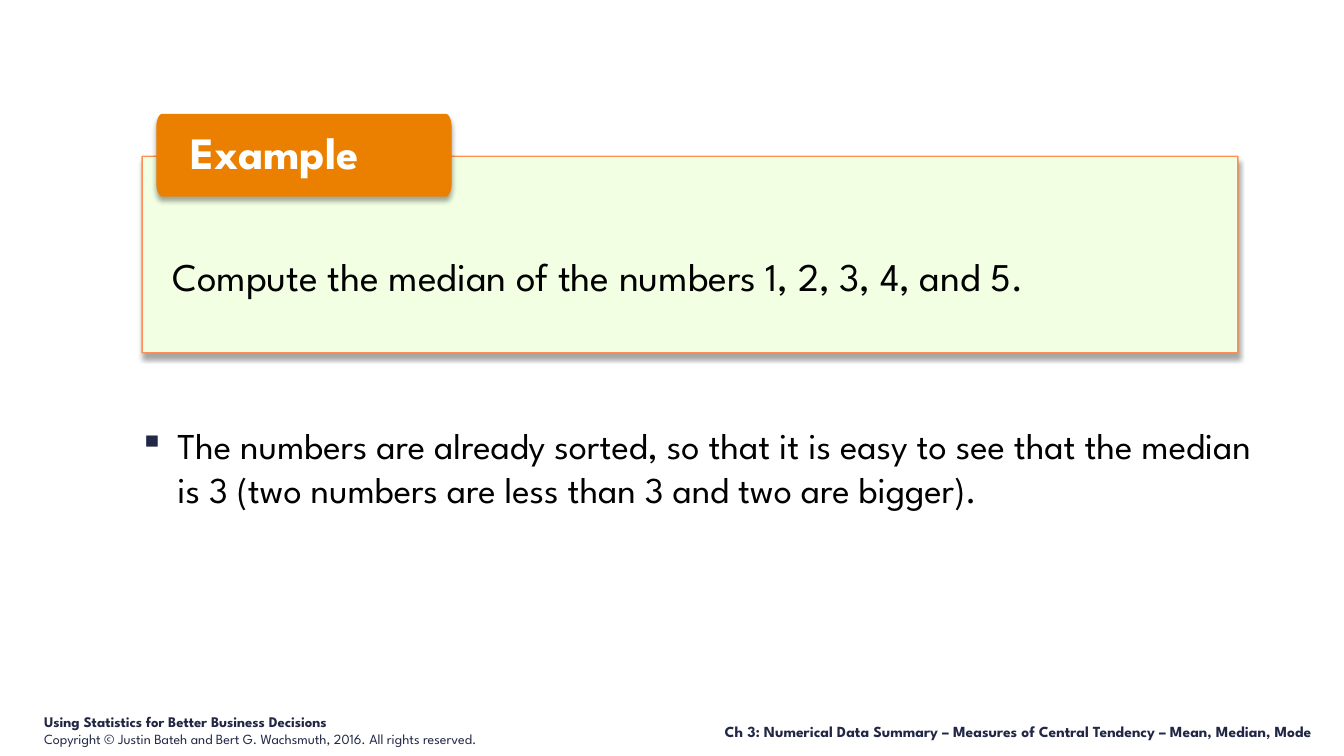
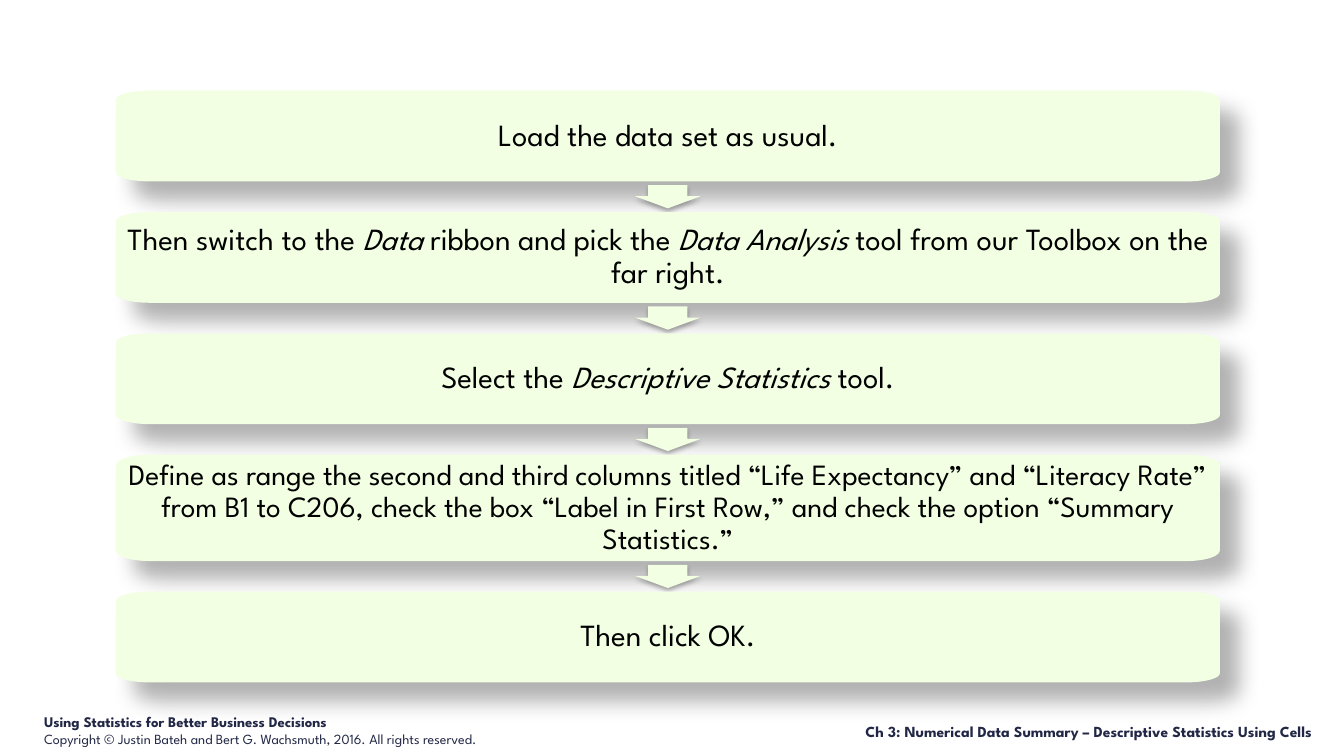
from dataclasses import dataclass
from math import cos, pi, sin

from lxml.etree import SubElement
from pptx import Presentation
from pptx.dml.color import RGBColor
from pptx.enum.shapes import MSO_SHAPE
from pptx.enum.text import MSO_ANCHOR, MSO_AUTO_SIZE, PP_ALIGN
from pptx.oxml.ns import qn
from pptx.util import Inches, Pt


@dataclass(frozen=True)
class Theme:
    font: str = "League Spartan"
    ink: str = "000000"
    navy: str = "212745"
    white: str = "FFFFFF"
    mint: str = "F2FFE3"
    orange: str = "EB8000"
    coral: str = "FF8643"
    label: float = 32
    example: float = 28
    body: float = 26
    step: float = 22
    long_step: float = 21
    chapter: float = 11
    book: float = 10.5
    copyright: float = 10


@dataclass(frozen=True)
class Shadow:
    opacity: int
    blur: float
    distance: float
    angle: int


THEME = Theme()
WIDTH, HEIGHT = Inches(13.33), Inches(7.5)
COLUMNS = ROWS = 100
PANEL_SHADOW = Shadow(35, 4, 3, 90)
STEP_SHADOW = Shadow(30, 15, 18, 45)
ARROW_SHADOW = Shadow(32, 3.5, 2.2, 90)

STEPS = [
    ("Load the data set as usual.", 12, THEME.step),
    ("Then switch to the *Data *ribbon and pick the *Data Analysis *tool from our Toolbox on the far right.",
     12, THEME.step),
    ("Select the *Descriptive Statistics *tool.", 12, THEME.step),
    ("Define as range the second and third columns titled “Life Expectancy” and “Literacy Rate” "
     "from B1 to C206, check the box “Label in First Row,” and check the option “Summary Statistics.”",
     14.07, THEME.long_step),
    ("Then click OK.", 12, THEME.step),
]


def cell(column, row, columns, rows):
    across, down = WIDTH / COLUMNS, HEIGHT / ROWS
    return round(column * across), round(row * down), round(columns * across), round(rows * down)


def write(frame, text, size, color=THEME.ink, bold=False, align=PP_ALIGN.LEFT,
          spacing=None, before=None, after=None):
    first = frame.paragraphs[0]
    paragraph = frame.add_paragraph() if first.runs else first
    paragraph.alignment = align
    paragraph.line_spacing = spacing
    paragraph.space_before = None if before is None else Pt(before)
    paragraph.space_after = None if after is None else Pt(after)
    for index, part in enumerate(text.split("*")):
        run = paragraph.add_run()
        run.text = part
        run.font.name = THEME.font
        run.font.size = Pt(size)
        run.font.bold = bold
        run.font.italic = index % 2 == 1
        run.font.color.rgb = RGBColor.from_string(color)
    return paragraph


def set_frame(frame, anchor=MSO_ANCHOR.TOP, insets=(0.1, 0.05, 0.1, 0.05)):
    frame.word_wrap = True
    frame.vertical_anchor = anchor
    frame.margin_left, frame.margin_top, frame.margin_right, frame.margin_bottom = map(Inches, insets)
    return frame


def add_text_area(slide, area, **layout):
    return set_frame(slide.shapes.add_textbox(*area).text_frame, **layout)


def set_opacity(color_element, percent):
    SubElement(color_element, qn("a:alpha"), val=str(percent * 1000))


def paint(surface, fill, shadow, outline=None):
    surface.fill.solid()
    surface.fill.fore_color.rgb = RGBColor.from_string(fill)
    if outline:
        surface.line.width = Pt(1)
        surface.line.color.rgb = RGBColor.from_string(outline)
        set_opacity(surface.line.fill._xPr.find(".//" + qn("a:srgbClr")), 90)
    else:
        surface.line.fill.background()
    surface.shadow.inherit = False
    effects = surface._element.spPr.find(qn("a:effectLst"))
    cast = SubElement(effects, qn("a:outerShdw"), blurRad=str(Pt(shadow.blur)),
                      dist=str(Pt(shadow.distance)), dir=str(shadow.angle * 60000),
                      algn="ctr", rotWithShape="0")
    set_opacity(SubElement(cast, qn("a:srgbClr"), val="000000"), shadow.opacity)
    return surface


def add_rounded(slide, area, curve, fill, shadow):
    left, top, width, height = area
    radius_x, radius_y = width * curve[0], height * curve[1]
    centers = [(left + width - radius_x, top + height - radius_y),
               (left + radius_x, top + height - radius_y),
               (left + radius_x, top + radius_y),
               (left + width - radius_x, top + radius_y)]
    points = []
    for quarter, (x, y) in enumerate(centers):
        for move in range(13):
            angle = (quarter + move / 12) * pi / 2
            points.append((round(x + radius_x * cos(angle)), round(y + radius_y * sin(angle))))
    outline = slide.shapes.build_freeform(*points[0])
    outline.add_line_segments(points[1:], close=True)
    return paint(outline.convert_to_shape(), fill, shadow)


def add_footer(slide, chapter):
    book = add_text_area(slide, cell(2.55, 93.6, 39.6, 5.33))
    write(book, "Using Statistics for Better Business Decisions", THEME.book, color=THEME.navy, bold=True)
    write(book, "Copyright © Justin Bateh and Bert G. Wachsmuth, 2016. All rights reserved.",
          THEME.copyright, color=THEME.navy, after=1)
    topic = add_text_area(slide, cell(43.43, 94.8, 54.98, 3.87), anchor=MSO_ANCHOR.BOTTOM)
    topic.auto_size = MSO_AUTO_SIZE.SHAPE_TO_FIT_TEXT
    write(topic, f"Ch 3: Numerical Data Summary – {chapter}", THEME.chapter,
          color=THEME.navy, bold=True, align=PP_ALIGN.RIGHT)


def add_example(slide, question):
    panel = slide.shapes.add_shape(MSO_SHAPE.RECTANGLE, *cell(10.58, 20.67, 81.53, 26))
    paint(panel, THEME.mint, PANEL_SHADOW, outline=THEME.coral)
    write(set_frame(panel.text_frame, insets=(0.3, 0.95, 0.1, 0)), question, THEME.example)
    tab = add_rounded(slide, cell(11.63, 15.07, 21.98, 10.93), (0.02, 0.17), THEME.orange, PANEL_SHADOW)
    write(set_frame(tab.text_frame, anchor=MSO_ANCHOR.MIDDLE, insets=(0.34, 0.04, 0.34, 0.04)),
          "Example", THEME.label, color=THEME.white, bold=True, spacing=0.9, after=0.35 * THEME.label)


def add_bullet(frame, text):
    point = write(frame, text, THEME.body, before=7)
    properties = point._p.get_or_add_pPr()
    properties.set("marL", str(Inches(0.45)))
    properties.set("indent", str(Inches(-0.38)))
    SubElement(SubElement(properties, qn("a:buClr")), qn("a:srgbClr"), val=THEME.navy)
    SubElement(properties, qn("a:buSzPct"), val="95000")
    SubElement(properties, qn("a:buChar"), char="▪")


def add_arrow(slide, middle):
    columns, rows = 4.88, 3.07
    arrow = slide.shapes.add_shape(
        MSO_SHAPE.DOWN_ARROW, *cell(49.69 - columns / 2, middle - rows / 2, columns, rows))
    arrow.adjustments[0], arrow.adjustments[1] = 0.6, 0.52
    paint(arrow, THEME.mint, ARROW_SHADOW)


def add_steps(slide, steps, top, bottom):
    gap = (bottom - top - sum(rows for _, rows, _ in steps)) / (len(steps) - 1)
    row = top
    for index, (text, rows, size) in enumerate(steps):
        if index:
            add_arrow(slide, row - gap / 2)
        step = add_rounded(slide, cell(8.63, row, 82.13, rows), (0.03, 0.1), THEME.mint, STEP_SHADOW)
        write(set_frame(step.text_frame, anchor=MSO_ANCHOR.MIDDLE, insets=(0.06,) * 4),
              text, size, align=PP_ALIGN.CENTER, spacing=0.9, after=0.35 * size)
        row += rows + gap


def main():
    deck = Presentation()
    deck.slide_width, deck.slide_height = WIDTH, HEIGHT
    blank = deck.slide_layouts[6]

    median = deck.slides.add_slide(blank)
    add_example(median, "Compute the median of the numbers 1, 2, 3, 4, and 5.")
    add_bullet(add_text_area(median, cell(9.08, 55.33, 87, 28)),
               "The numbers are already sorted, so that it is easy to see that the median is 3 "
               "(two numbers are less than 3 and two are bigger).")
    add_footer(median, "Measures of Central Tendency – Mean, Median, Mode")

    procedure = deck.slides.add_slide(blank)
    add_steps(procedure, STEPS, 12, 90.27)
    add_footer(procedure, "Descriptive Statistics Using Cells")

    deck.save("out.pptx")


if __name__ == "__main__":
    main()
